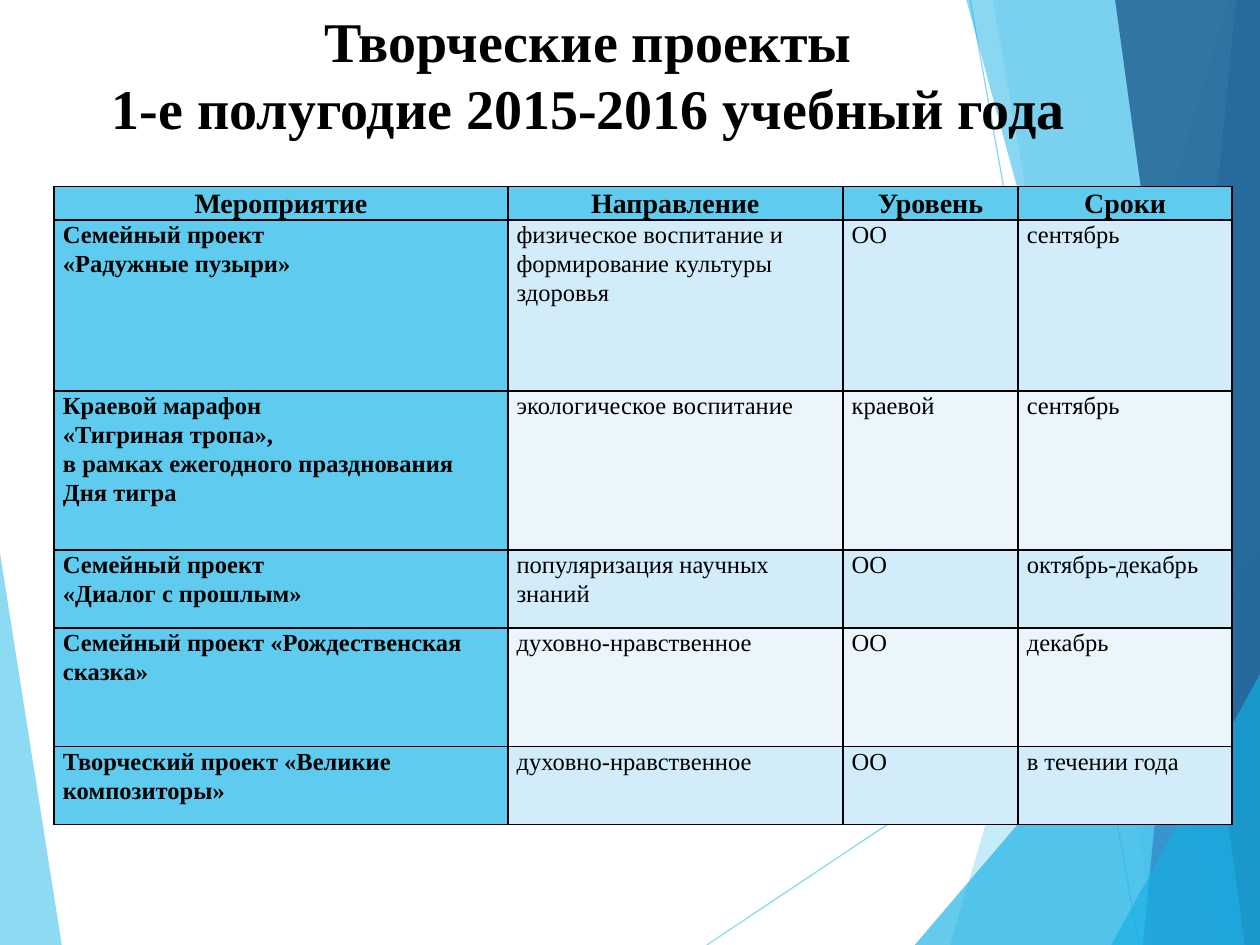
"""Build a slide with a table of creative school projects."""
from lxml import etree
from pptx import Presentation, util as u
from pptx.dml.color import RGBColor
from pptx.enum import text
from pptx.oxml import parse_xml
from pptx.oxml.ns import nsdecls, qn

COLORS = {"sky": "5FCBEF", "cyan": "17B0E4", "blue": "2E83C3", "navy": "226292",
          "odd": "D2ECF9", "even": "EAF6FC", "ink": "000000"}
FONT = "Times New Roman"
TITLE = ["Творческие проекты", "1-е полугодие 2015-2016 учебный года"]
HEADS = ["Мероприятие", "Направление", "Уровень", "Сроки"]
ROWS = [
    (["Семейный проект", "«Радужные пузыри»"],
     "физическое воспитание и формирование культуры здоровья", "ОО", "сентябрь"),
    (["Краевой марафон", "«Тигриная тропа»,", "в рамках ежегодного празднования Дня тигра"],
     "экологическое воспитание", "краевой", "сентябрь"),
    (["Семейный проект", "«Диалог с прошлым»"],
     "популяризация научных знаний", "ОО", "октябрь-декабрь"),
    (["Семейный проект «Рождественская сказка»"], "духовно-нравственное", "ОО", "декабрь"),
    (["Творческий проект «Великие композиторы»"], "духовно-нравственное", "ОО", "в течении года"),
]
WIDTHS = [3.6, 2.66, 1.39, 1.7]
HEIGHTS = [0.26, 1.36, 1.26, 0.62, 0.94, 0.62]
LEFT = ("sky", 70, [(0, 4.39), (0.49, 7.5), (0, 7.5)])
RAYS = [((5.61, 7.5), (10, 4.57)), ((7.7, 0), (9.04, 7.5))]
FACETS = [
    ("sky", 36, [(9.75, 0), (7.54, 7.5), (10, 7.5), (10, 0)]),
    ("sky", 20, [(7.88, 0), (9.19, 7.5), (10, 7.5), (10, 0)]),
    ("cyan", 66, [(7.26, 7.5), (10, 4.29), (10, 7.5)]),
    ("cyan", 50, [(7.67, 0), (9.7, 7.5), (10, 7.5), (10, 0)]),
    ("blue", 70, [(9.81, 0), (9.07, 7.5), (10, 7.5), (10, 0)]),
    ("navy", 82, [(8.85, 0), (9.88, 7.5), (10, 7.5), (10, 0)]),
    ("cyan", 66, [(8.82, 7.5), (10, 5.35), (10, 7.5)]),
]


def color(name):
    return RGBColor.from_string(COLORS[name])


def fade(shape, pct):
    for tint in shape._element.spPr.iter(qn("a:srgbClr")):
        etree.SubElement(tint, qn("a:alpha")).set("val", str(pct * 1000))


def facet(slide, name, pct, points):
    spots = [(u.Inches(x), u.Inches(y)) for x, y in points]
    form = slide.shapes.build_freeform(*spots[0])
    form.add_line_segments(spots[1:], close=True)
    shape = form.convert_to_shape()
    shape.shadow.inherit = False
    shape.fill.solid()
    shape.fill.fore_color.rgb = color(name)
    shape.line.fill.background()
    fade(shape, pct)


def ray(slide, start, end):
    line = slide.shapes.add_connector(1, *[u.Inches(v) for v in start + end])
    line.line.color.rgb = color("sky")
    line.line.width = u.Pt(0.75)
    fade(line, 70)
    etree.SubElement(line._element.spPr, qn("a:effectLst"))


def write(para, words, size, bold, align):
    para.alignment = align
    run = para.add_run()
    run.text = words
    font = run.font
    font.name, font.size, font.bold = FONT, u.Pt(size), bold
    font.color.rgb = color("ink")


def border(cell):
    props = cell._tc.get_or_add_tcPr()
    for spot, side in enumerate("LRTB"):
        props.insert(spot, parse_xml(
            f'<a:ln{side} {nsdecls("a")} w="12700"><a:solidFill>'
            f'<a:srgbClr val="{COLORS["ink"]}"/></a:solidFill></a:ln{side}>'))


def fill_cell(cell, lines, tint, size, bold, align):
    cell.margin_left = cell.margin_right = u.Inches(0.07)
    cell.margin_top = cell.margin_bottom = 0
    cell.fill.solid()
    cell.fill.fore_color.rgb = color(tint)
    border(cell)
    frame = cell.text_frame
    for i, words in enumerate(lines):
        para = frame.add_paragraph() if i else frame.paragraphs[0]
        para.line_spacing = 1.07
        write(para, words, size, bold, align)


def add_title(slide):
    title = slide.shapes.title
    slide.shapes._spTree.append(title._element)
    title.left, title.top = u.Inches(0.24), 0
    title.width, title.height = u.Inches(8.86), u.Inches(0.74)
    frame = title.text_frame
    frame.word_wrap = True
    frame.auto_size = text.MSO_AUTO_SIZE.NONE
    frame.vertical_anchor = text.MSO_ANCHOR.TOP
    para = frame.paragraphs[0]
    for i, words in enumerate(TITLE):
        if i:
            para.add_line_break()
        write(para, words, 32, True, text.PP_ALIGN.CENTER)


def add_grid(slide):
    table = slide.shapes.add_table(
        len(HEIGHTS), len(WIDTHS), u.Inches(0.43), u.Inches(1.48),
        u.Inches(sum(WIDTHS)), u.Inches(sum(HEIGHTS))).table
    for col, width in zip(table.columns, WIDTHS):
        col.width = u.Inches(width)
    for row, height in zip(table.rows, HEIGHTS):
        row.height = u.Inches(height)
    for c, head in enumerate(HEADS):
        fill_cell(table.cell(0, c), [head], "sky", 16, True, text.PP_ALIGN.CENTER)
    for r, (name, *rest) in enumerate(ROWS, 1):
        band = "odd" if r % 2 else "even"
        fill_cell(table.cell(r, 0), name, "sky", 14, True, text.PP_ALIGN.LEFT)
        for c, words in enumerate(rest, 1):
            fill_cell(table.cell(r, c), [words], band, 14, False, text.PP_ALIGN.LEFT)


def main():
    prs = Presentation()
    prs.slide_width, prs.slide_height = u.Inches(10), u.Inches(7.5)
    slide = prs.slides.add_slide(prs.slide_layouts[5])
    facet(slide, *LEFT)
    for start, end in RAYS:
        ray(slide, start, end)
    for part in FACETS:
        facet(slide, *part)
    add_title(slide)
    add_grid(slide)
    prs.save("out.pptx")


if __name__ == "__main__":
    main()
